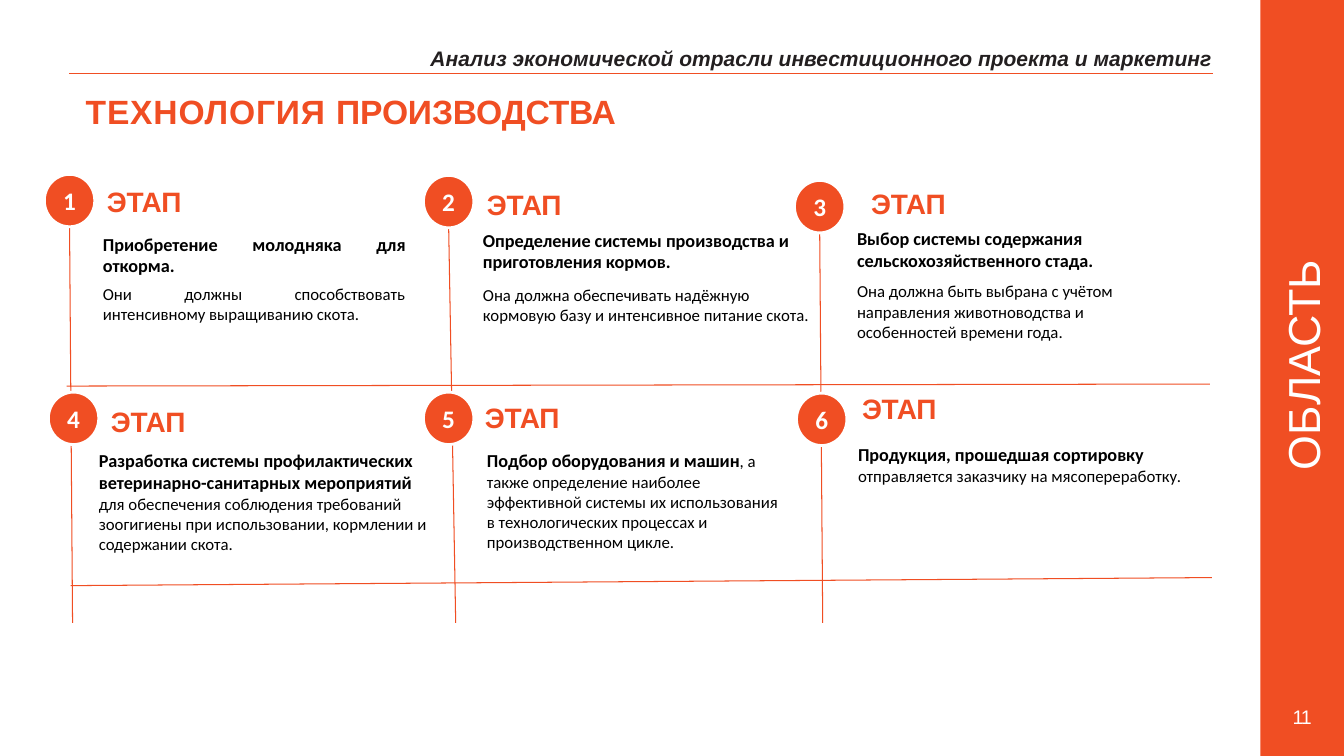
from lxml.etree import SubElement
from pptx import Presentation
from pptx.dml.color import RGBColor
from pptx.enum.shapes import MSO_CONNECTOR, MSO_SHAPE
from pptx.enum.text import MSO_ANCHOR, MSO_AUTO_SIZE, PP_ALIGN
from pptx.oxml.ns import qn
from pptx.util import Inches, Pt

COLORS = {"orange": "F04E23", "white": "FFFFFF", "black": "000000", "ink": "231F20"}

# Text formats
STYLES = {
    "title": dict(name="Arial", size=Pt(24), bold=True, color="orange", spacing=0.6),
    "title_end": dict(name="Arial", size=Pt(24), bold=True, color="orange", spacing=-0.1),
    "section": dict(name="Arial", size=Pt(15), bold=True, italic=True, color="ink"),
    "label": dict(name="Arial", size=Pt(20), bold=True, color="orange", spacing=-0.2),
    "number": dict(name="Calibri", size=Pt(18), bold=True, color="white"),
    "lead": dict(name="Calibri", size=Pt(13), bold=True, color="black"),
    "detail": dict(name="Calibri", size=Pt(12), bold=False, color="black"),
    "page": dict(name="Arial", size=Pt(14), color="white", spacing=-0.8),
    "sidebar": dict(name="Arial", size=Pt(32), color="white"),
}

# Each stage: circle corner, label corner, body box, body top inset,
# paragraph gap, alignment, paragraphs of (style, text) spans
STAGES = [
    ((0.44, 1.73), (1.04, 1.71), (1, 2.19, 3.02, 1.03), 0.12, 5, PP_ALIGN.JUSTIFY,
     [[("lead", "Приобретение молодняка для откорма.")],
      [("detail", "Они должны способствовать интенсивному выращиванию скота.")]]),
    ((4.2, 1.74), (4.81, 1.74), (4.77, 2.15, 3.26, 1.51), 0.12, 8.6, PP_ALIGN.LEFT,
     [[("lead", "Определение системы производства и приготовления кормов.")],
      [("detail", "Она должна обеспечивать надёжную кормовую базу и интенсивное питание скота.")]]),
    ((7.88, 1.79), (8.62, 1.73), (8.48, 2.16, 2.91, 1.24), 0.1, 6.9, PP_ALIGN.LEFT,
     [[("lead", "Выбор системы содержания сельскохозяйственного стада.")],
      [("detail", "Она должна быть выбрана с учётом направления животноводства "
                  "и особенностей времени года.")]]),
    ((0.48, 3.89), (1.08, 3.89), (0.96, 4.36, 3.32, 1.65), 0.1, 0, PP_ALIGN.LEFT,
     [[("lead", "Разработка системы профилактических ветеринарно-санитарных мероприятий "),
       ("detail", "для обеспечения соблюдения требований зоогигиены при использовании, "
                  "кормлении и содержании скота.")]]),
    ((4.2, 3.89), (4.79, 3.85), (4.81, 4.36, 2.96, 1.33), 0.1, 0, PP_ALIGN.LEFT,
     [[("lead", "Подбор оборудования и машин"),
       ("detail", ", а также определение наиболее эффективной системы их использования "
                  "в технологических процессах и производственном цикле.")]]),
    ((7.9, 3.9), (8.53, 3.76), (8.49, 4.3, 3.33, 0.72), 0.1, 0, PP_ALIGN.LEFT,
     [[("lead", "Продукция, прошедшая сортировку "),
       ("detail", "отправляется заказчику на мясопереработку.")]]),
]

# Grid lines: start x, start y, end x, end y
GRID_LINES = [
    (0.69, 2.25, 0.72, 6.18), (4.45, 2.26, 4.52, 6.18), (8.13, 2.31, 8.16, 6.18),
    (12, 3.81, 0.66, 3.83), (12.02, 5.73, 0.7, 5.81),
]


def color(name):
    return RGBColor.from_string(COLORS[name])


def write(shape, paragraphs, left=0, top=0, gap=0, align=PP_ALIGN.LEFT, anchor=MSO_ANCHOR.TOP):
    frame = shape.text_frame
    settings = dict(word_wrap=True, auto_size=MSO_AUTO_SIZE.NONE, vertical_anchor=anchor,
                    margin_left=Inches(left), margin_top=Inches(top),
                    margin_right=0, margin_bottom=0)
    for key, value in settings.items():
        setattr(frame, key, value)
    for index, spans in enumerate(paragraphs):
        para = frame.add_paragraph() if index else frame.paragraphs[0]
        para.alignment = align
        if index:
            para.space_before = Pt(gap)
        for style, text in spans:
            span = para.add_run()
            span.text = text
            for key, value in STYLES[style].items():
                if key == "color":
                    span.font.color.rgb = color(value)
                elif key == "spacing":
                    span._r.get_or_add_rPr().set("spc", str(round(value * 100)))
                else:
                    setattr(span.font, key, value)


def add_text(page, box, paragraphs, **layout):
    shape = page.shapes.add_textbox(*map(Inches, box))
    write(shape, paragraphs, **layout)
    return shape


def add_line(page, ends, width):
    line = page.shapes.add_connector(MSO_CONNECTOR.STRAIGHT, *map(Inches, ends))
    line.line.color.rgb = color("orange")
    line.line.width = Pt(width)
    SubElement(line._element.spPr, qn("a:effectLst"))


def add_filled(page, kind, box):
    shape = page.shapes.add_shape(kind, *map(Inches, box))
    shape.shadow.inherit = False
    shape.fill.solid()
    shape.fill.fore_color.rgb = color("orange")
    return shape


def build_sidebar(page, box):
    left, top, width, height = box
    add_filled(page, MSO_SHAPE.RECTANGLE, box).line.fill.background()
    # Vertical caption, turned about its centre
    caption_width, caption_height = 2.4, 0.6
    caption = add_text(
        page, (left + width / 2 - caption_width / 2, top + 3.62 - caption_height / 2,
               caption_width, caption_height),
        [[("sidebar", "ОБЛАСТЬ")]], align=PP_ALIGN.CENTER, anchor=MSO_ANCHOR.MIDDLE)
    caption.rotation = 270
    add_text(page, (left + 0.31, top + 6.97, 0.3, 0.3), [[("page", "11")]],
             left=0.01, top=0.02)


def build_header(page, box):
    left, top, width, height = box
    add_text(page, (left + 3.58, top, 7.9, 0.28),
             [[("section", "Анализ экономической отрасли инвестиционного проекта и маркетинг")]],
             left=0.01, top=0.01)
    add_line(page, (left + width, top + 0.29, left, top + 0.29), 0.5)
    # Title
    title = page.shapes.title
    places = dict(left=left, top=top + 0.32, width=width, height=height - 0.32)
    for key, value in places.items():
        setattr(title, key, Inches(value))
    write(title, [[("title", "ТЕХНОЛОГИЯ "), ("title_end", "ПРОИЗВОДСТВА")]],
          left=0.17, top=0.14)


def build_stage(page, number, stage):
    circle_at, label_at, body_box, inset, gap, align, paragraphs = stage
    circle = add_filled(page, MSO_SHAPE.OVAL, (*circle_at, 0.5, 0.52))
    circle.line.color.rgb = color("white")
    circle.line.width = Pt(2)
    write(circle, [[("number", str(number))]], align=PP_ALIGN.CENTER, anchor=MSO_ANCHOR.MIDDLE)
    add_text(page, (*label_at, 0.85, 0.46), [[("label", "ЭТАП")]], left=0.02, top=0.12)
    add_text(page, body_box, paragraphs, left=0.02, top=inset, gap=gap, align=align)


def main():
    deck = Presentation()
    deck.slide_width, deck.slide_height = Inches(13.33), Inches(7.5)
    page = deck.slides.add_slide(deck.slide_layouts[5])
    build_sidebar(page, (12.5, 0, 0.83, 7.5))
    build_header(page, (0.68, 0.44, 11.35, 0.86))
    # Stage grid
    for ends in GRID_LINES:
        add_line(page, ends, 0.75)
    for number, stage in enumerate(STAGES, 1):
        build_stage(page, number, stage)
    deck.save("out.pptx")


if __name__ == "__main__":
    main()
